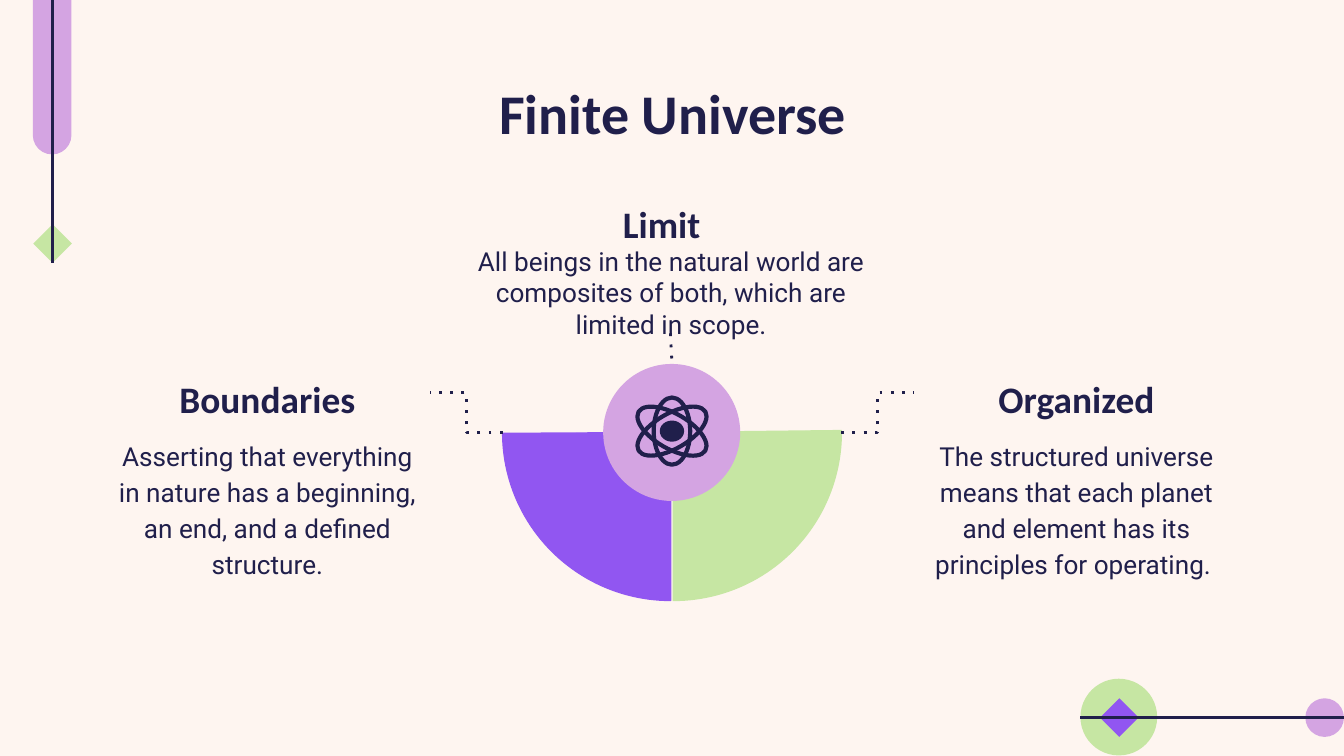
"""Build the Finite Universe slide: a half-circle diagram with three captions."""
from lxml.etree import SubElement
from pptx import Presentation
from pptx.dml.color import RGBColor
from pptx.enum.shapes import MSO_CONNECTOR as LINK, MSO_SHAPE as SHAPE
from pptx.enum.text import MSO_ANCHOR as ANCHOR, MSO_AUTO_SIZE as FIT, PP_ALIGN as ALIGN
from pptx.oxml.ns import qn
from pptx.util import Cm, Pt

NAVY, LILAC, GREEN, PURPLE = "201F4B", "D4A4E2", "C6E6A3", "9156F1"
color = RGBColor.from_string


def write(box, place, text, font, size, bold, anchor, spacing):
    """Place a text box and give it one centred paragraph."""
    box.left, box.top, box.width, box.height = map(Cm, place)
    frame = box.text_frame
    frame.auto_size, frame.word_wrap, frame.vertical_anchor = FIT.NONE, True, anchor
    frame.margin_left = frame.margin_right = Cm(0.25)
    frame.margin_top = frame.margin_bottom = Cm(0.25)
    para = frame.paragraphs[0]
    para.text, para.alignment, para.line_spacing = text, ALIGN.CENTER, spacing
    para.font.name, para.font.size, para.font.bold = font, Pt(size), bold
    para.font.color.rgb = color(NAVY)


def draw(kind, place, fill=None, outline=None, weight=0.75, turn=0):
    """Add a preset shape with a flat fill, an outline, or both."""
    shape = slide.shapes.add_shape(kind, *map(Cm, place))
    shape.shadow.inherit, shape.rotation = False, turn
    for part, tint in ((shape.fill, fill), (shape.line.fill, outline)):
        if tint:
            part.solid()
            part.fore_color.rgb = color(tint)
        else:
            part.background()
    if outline:
        shape.line.width = Pt(weight)
    return shape


deck = Presentation()
deck.slide_width, deck.slide_height = Cm(25.4), Cm(14.29)
slide = deck.slides.add_slide(deck.slide_layouts[5])
slide.background.fill.solid()
slide.background.fill.fore_color.rgb = color("FEF5F0")
write(slide.shapes.title, (2.01, 1.24, 21.41, 1.6), "Finite Universe",
      "Calibri", 30, True, ANCHOR.TOP, 1)

for kind, place, fill, turn in (
    (SHAPE.OVAL, (20.42, 12.83, 1.45, 1.45), GREEN, 0),
    (SHAPE.DIAMOND, (20.79, 13.2, 0.73, 0.73), PURPLE, 0),
    (SHAPE.OVAL, (24.67, 13.2, 0.73, 0.73), LILAC, 0),
    (SHAPE.ROUNDED_RECTANGLE, (-0.73, 0.84, 3.43, 0.73), LILAC, 90),
    (SHAPE.DIAMOND, (0.63, 4.24, 0.73, 0.73), GREEN, 0),
):
    ornament = draw(kind, place, fill, turn=turn)
    if kind == SHAPE.ROUNDED_RECTANGLE:
        ornament.adjustments[0] = 0.5

write(slide.shapes.add_textbox(0, 0, 0, 0), (8.71, 4.39, 7.95, 1.9),
      "All beings in the natural world are composites of both, which are limited in scope.",
      "Roboto", 14, False, ANCHOR.TOP, 1)
write(slide.shapes.add_textbox(0, 0, 0, 0), (9.65, 3.38, 5.87, 1.55), "Limit ",
      "Calibri", 20, True, ANCHOR.MIDDLE, 1.15)
for left, heading, detail in (
    (17.27, "Organized", "The structured universe means that each planet and element "
                         "has its principles for operating. "),
    (1.98, "Boundaries", "Asserting that everything in nature has a beginning, an end, "
                         "and a defined structure."),
):
    write(slide.shapes.add_textbox(0, 0, 0, 0), (left, 6.65, 6.15, 1.55), heading,
          "Calibri", 20, True, ANCHOR.BOTTOM, 1.15)
    write(slide.shapes.add_textbox(0, 0, 0, 0), (left, 7.98, 6.15, 3.86), detail,
          "Roboto", 14, False, ANCHOR.TOP, 1.15)

for left, tint, start, flipped in ((9.55, GREEN, 107.61, False), (9.5, PURPLE, 108.18, True)):
    quarter = draw(SHAPE.PIE, (left, 5, 6.35, 6.35), tint, tint, turn=180)
    quarter.adjustments[0], quarter.adjustments[1] = start, 162
    if flipped:
        quarter._element.spPr.find(qn("a:xfrm")).set("flipH", "1")

draw(SHAPE.OVAL, (11.4, 6.88, 2.59, 2.59), LILAC)

for kind, ends, dotted in (
    (LINK.STRAIGHT, (20.42, 13.56, 25.4, 13.56), False),
    (LINK.STRAIGHT, (0.99, 0, 0.99, 4.98), False),
    (LINK.ELBOW, (9.5, 8.18, 8.13, 7.42), True),
    (LINK.ELBOW, (15.9, 8.18, 17.27, 7.42), True),
    (LINK.STRAIGHT, (12.67, 6.3, 12.7, 6.88), True),
):
    link = slide.shapes.add_connector(kind, *map(Cm, ends))
    link.line.color.rgb, link.line.width = color(NAVY), Pt(1.5)
    properties = link._element.spPr
    if dotted:
        SubElement(properties.find(qn("a:ln")), qn("a:prstDash")).set("val", "dot")
    SubElement(properties, qn("a:effectLst"))

center_x, center_y = 12.7, 8.15
for width, height, turn in ((0.69, 1.27, 0), (0.66, 1.46, 60), (0.66, 1.46, -60)):
    draw(SHAPE.OVAL, (center_x - width / 2, center_y - height / 2, width, height),
         outline=NAVY, weight=2.25, turn=turn)
draw(SHAPE.OVAL, (center_x - 0.23, center_y - 0.2, 0.46, 0.4), NAVY)

deck.save("out.pptx")
